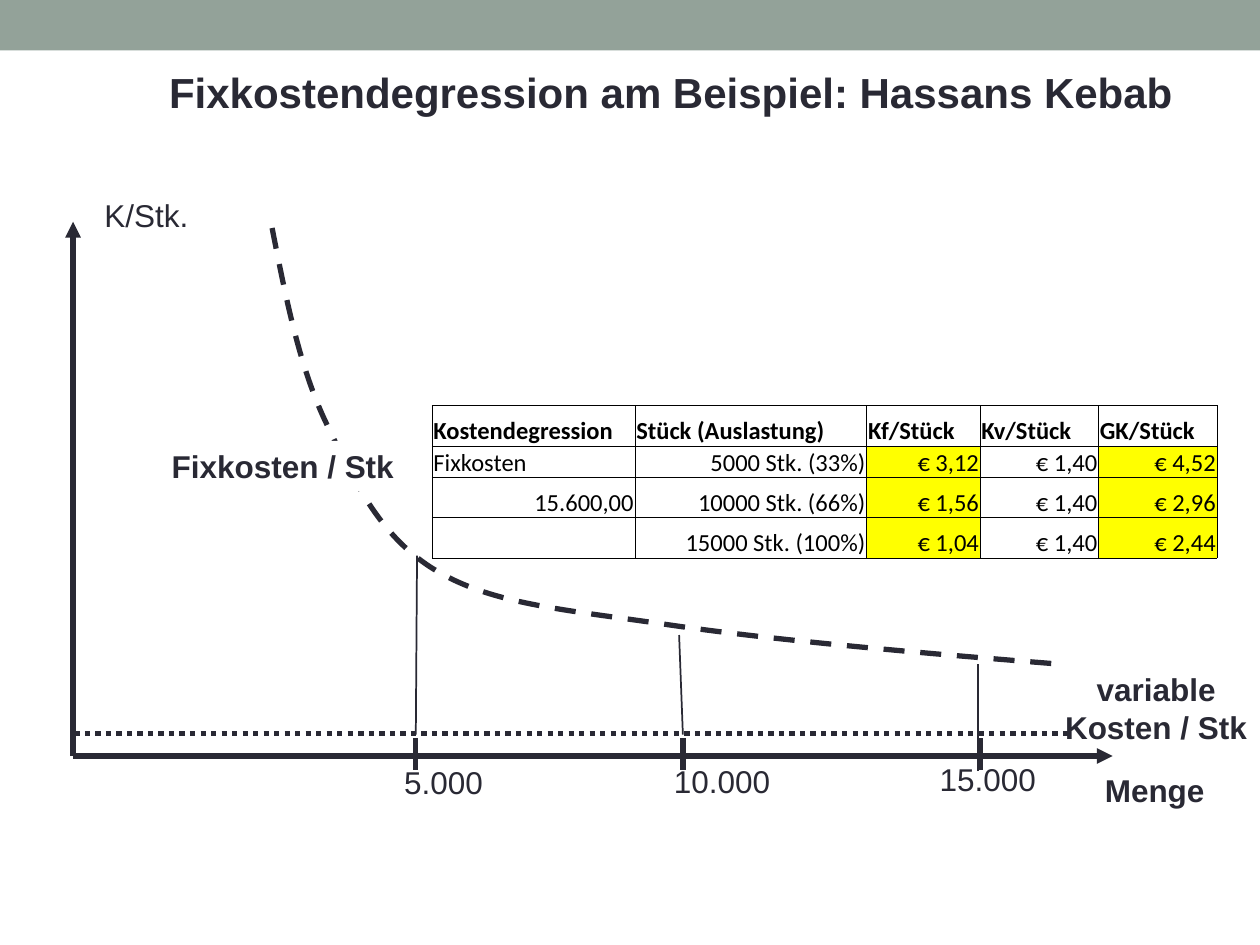
from lxml import etree
from pptx import Presentation
from pptx.dml.color import RGBColor
from pptx.enum.dml import MSO_LINE
from pptx.enum.shapes import MSO_CONNECTOR, MSO_SHAPE
from pptx.enum.text import MSO_ANCHOR, PP_ALIGN
from pptx.oxml.ns import qn
from pptx.util import Inches, Pt

LEFT, MID, RIGHT = PP_ALIGN.LEFT, PP_ALIGN.CENTER, PP_ALIGN.RIGHT
TOP, CENTER, BOTTOM = MSO_ANCHOR.TOP, MSO_ANCHOR.MIDDLE, MSO_ANCHOR.BOTTOM
DASH, DOTS = MSO_LINE.DASH, MSO_LINE.ROUND_DOT
RECT, STRAIGHT = MSO_SHAPE.RECTANGLE, MSO_CONNECTOR.STRAIGHT
INK, SAGE, WHITE, BLACK, YELLOW = "292934", "93A299", "FFFFFF", "000000", "FFFF00"

TICKS = [
    (2.72, "5.000", (2.53, 4.25, 0.9, 0.44)),
    (4.84, "10.000", (4.67, 4.24, 1.06, 0.44)),
    (7.2, "15.000", (6.78, 4.22, 1.06, 0.44)),
]
DROPS = [
    ((2.72, 4.07), (2.73, 2.65)),
    ((4.84, 4.07), (4.81, 3.28)),
    ((7.18, 4.36), (7.18, 3.51)),
]
CURVE = [
    (1.58, 0.05), (1.69, 0.61), (1.8, 1.17), (2.02, 1.62), (2.24, 2.08),
    (2.45, 2.52), (2.9, 2.78), (3.35, 3.04), (3.91, 3.08), (4.73, 3.2),
    (5.55, 3.32), (6.68, 3.42), (7.81, 3.51),
]
COLS = [1.61, 1.84, 0.9, 0.94, 0.94]
ROWS = [0.32, 0.25, 0.32, 0.32]
CELLS = [
    ["Kostendegression", "Stück (Auslastung)", "Kf/Stück", "Kv/Stück", "GK/Stück"],
    ["Fixkosten", "5000 Stk. (33%)", "€ 3,12", "€ 1,40", "€ 4,52"],
    ["15.600,00", "10000 Stk. (66%)", "€ 1,56", "€ 1,40", "€ 2,96"],
    ["", "15000 Stk. (100%)", "€ 1,04", "€ 1,40", "€ 2,44"],
]
CELL = {
    "margin_left": Inches(0.01), "margin_right": Inches(0.01),
    "margin_top": Inches(0.01), "margin_bottom": 0, "vertical_anchor": BOTTOM,
}


def tint(code):
    """Turn a hex string into a colour."""
    return RGBColor.from_string(code)


def put(item, vals):
    """Set attributes of an object from a dict."""
    for name, val in vals.items():
        setattr(item, name, val)


def write(frame, text, size=18, bold=False, align=LEFT, font="Arial", color=INK):
    """Fill a text frame with one paragraph for each line."""
    for num, line in enumerate(text.split("\n")):
        para = frame.add_paragraph() if num else frame.paragraphs[0]
        para.alignment = align
        run = para.add_run()
        run.text = line
        put(run.font, {"name": font, "size": Pt(size), "bold": bold})
        run.font.color.rgb = tint(color)


def label(slide, box, text, anchor=TOP, **look):
    """Add an unwrapped text box."""
    frame = slide.shapes.add_textbox(*map(Inches, box)).text_frame
    put(frame, {"word_wrap": False, "vertical_anchor": anchor})
    write(frame, text, **look)


def block(slide, box, fill):
    """Add a plain filled rectangle."""
    shape = slide.shapes.add_shape(RECT, *map(Inches, box))
    shape.shadow.inherit = False
    shape.fill.solid()
    shape.fill.fore_color.rgb = tint(fill)
    shape.line.fill.background()
    return shape


def stroke(shape, width, dash=None):
    """Style the line of a shape or connector."""
    shape.line.color.rgb = tint(INK)
    put(shape.line, {"width": Pt(width), "dash_style": dash})


def rule(slide, start, end, width=3, dash=None, arrow=False):
    """Draw a straight line, with an arrowhead if asked."""
    line = slide.shapes.add_connector(STRAIGHT, *map(Inches, start + end))
    stroke(line, width, dash)
    if arrow:
        tip = etree.SubElement(line.line._get_or_add_ln(), qn("a:tailEnd"))
        tip.set("type", "triangle")
    etree.SubElement(line._element.spPr, qn("a:effectLst"))


def bend(slide, dots):
    """Draw a dashed Bézier curve through its control points."""
    spots = [(Inches(x), Inches(y)) for x, y in dots]
    pen = slide.shapes.build_freeform(*spots[0])
    pen.add_line_segments(spots[1:], close=False)
    shape = pen.convert_to_shape()
    shape.shadow.inherit = False
    shape.fill.background()
    stroke(shape, 3, DASH)
    track = next(shape._element.iter(qn("a:path")))
    legs = track.findall(qn("a:lnTo"))
    for num in range(0, len(legs), 3):
        arc = etree.SubElement(track, qn("a:cubicBezTo"))
        for leg in legs[num:num + 3]:
            arc.append(leg[0])
            track.remove(leg)


def header(slide, left, top, width):
    """Place the top band and the title."""
    block(slide, (left, top, width, 0.4), SAGE)
    label(slide, (left + 1.01, top + 0.45, 8.63, 0.56),
          "Fixkostendegression am Beispiel: Hassans Kebab",
          CENTER, size=24, bold=True, align=MID)


def plot(slide, left, top, width, height):
    """Place the axes, the cost curves and their labels."""
    def at(x, y, *size):
        return (left + x, top + y, *size)

    rule(slide, at(0, height), at(0, 0), arrow=True)
    rule(slide, at(0, height), at(width, height), arrow=True)
    for x, text, box in TICKS:
        rule(slide, at(x, height + 0.11), at(x, height - 0.14))
        label(slide, at(*box), text)
    label(slide, at(8.09, 4.31, 1.08, 0.43), "Menge", bold=True)
    label(slide, at(0.15, -0.25, 0.94, 0.43), "K/Stk.")
    rule(slide, at(0.01, 4.06), at(7.93, 4.06), dash=DOTS)
    label(slide, at(7.77, 3.51, 1.65, 0.7), "variable\nKosten / Stk",
          bold=True, align=MID)
    bend(slide, [at(*dot) for dot in CURVE])
    frame = block(slide, at(0.68, 1.74, 1.97, 0.4), WHITE).text_frame
    put(frame, {"word_wrap": False, "vertical_anchor": TOP})
    write(frame, "Fixkosten / Stk", bold=True, align=MID)
    for start, end in DROPS:
        rule(slide, at(*start), at(*end), width=1)


def frame_cell(cell):
    """Draw thin black borders round a cell."""
    props = cell._tc.get_or_add_tcPr()
    for side in ("lnL", "lnR", "lnT", "lnB"):
        edge = etree.SubElement(props, qn("a:" + side), w=str(Pt(0.5)))
        fill = etree.SubElement(edge, qn("a:solidFill"))
        etree.SubElement(fill, qn("a:srgbClr"), val=BLACK)


def costs(slide, left, top):
    """Place the cost table."""
    box = map(Inches, (left, top, sum(COLS), sum(ROWS)))
    table = slide.shapes.add_table(len(ROWS), len(COLS), *box).table
    put(table, {"first_row": False, "horz_banding": False})
    for col, width in zip(table.columns, COLS):
        col.width = Inches(width)
    for r, (row, height) in enumerate(zip(table.rows, ROWS)):
        row.height = Inches(height)
        for c, (cell, text) in enumerate(zip(row.cells, CELLS[r])):
            put(cell, CELL)
            frame_cell(cell)
            if r and c in (2, 4):
                cell.fill.solid()
                cell.fill.fore_color.rgb = tint(YELLOW)
            else:
                cell.fill.background()
            if text:
                side = LEFT if r == 0 or text == "Fixkosten" else RIGHT
                write(cell.text_frame, text, size=14, bold=r == 0,
                      align=side, font="Calibri", color=BLACK)


def main():
    """Build and save the slide."""
    deck = Presentation()
    put(deck, {"slide_width": Inches(10), "slide_height": Inches(7.5)})
    slide = deck.slides.add_slide(deck.slide_layouts[6])
    header(slide, 0, 0, 10)
    plot(slide, 0.58, 1.76, 8.25, 4.24)
    costs(slide, 3.43, 3.22)
    deck.save("out.pptx")


if __name__ == "__main__":
    main()
